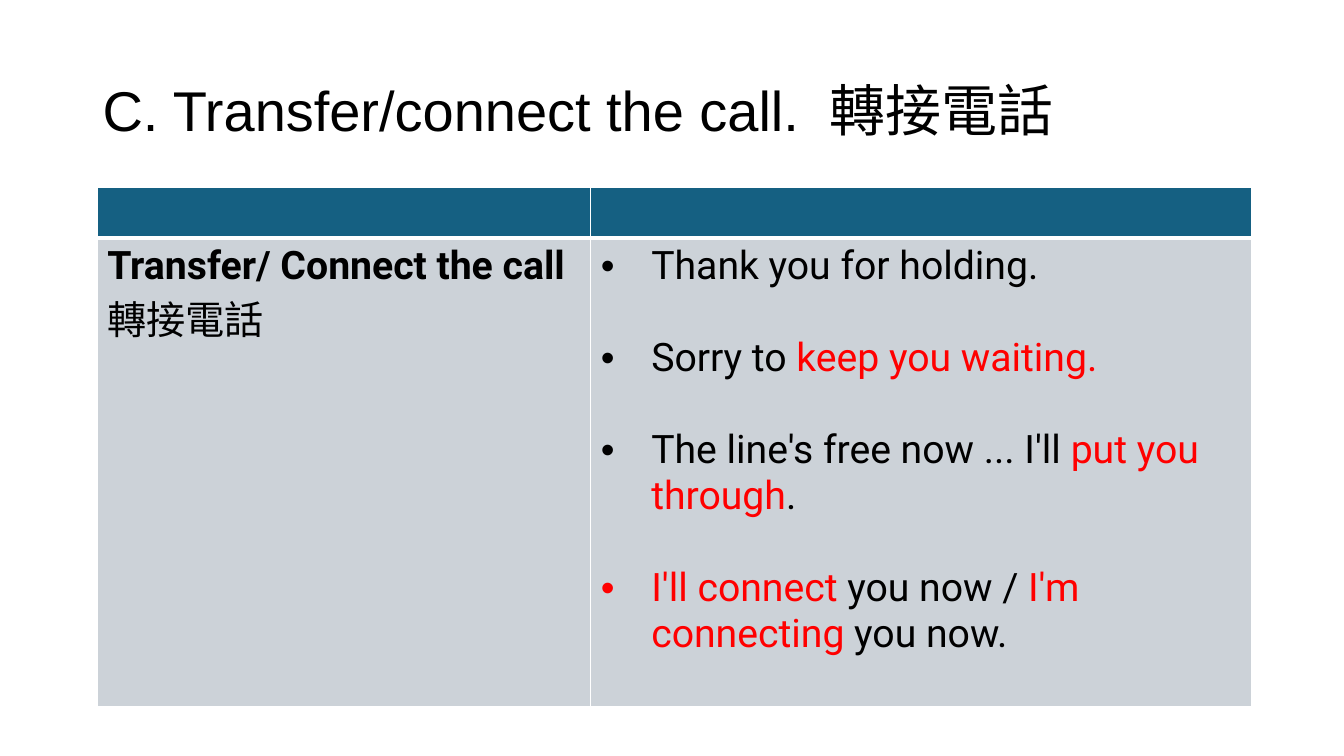
from lxml import etree
from pptx import Presentation
from pptx import util as u
from pptx.dml.color import RGBColor
from pptx.enum import text
from pptx.oxml import ns

BLACK = RGBColor(0x00, 0x00, 0x00)
RED = RGBColor(0xFF, 0x00, 0x00)
TEAL = RGBColor(0x15, 0x60, 0x82)
GREY = RGBColor(0xCC, 0xD2, 0xD8)
WHITE = RGBColor(0xFF, 0xFF, 0xFF)

PHRASES = [
    [("Thank you for holding.", BLACK)],
    [("Sorry to ", BLACK), ("keep you waiting.", RED)],
    [("The line's free now ... I'll ", BLACK), ("put you through", RED), (".", BLACK)],
    [("I'll connect ", RED), ("you now / ", BLACK), ("I'm connecting ", RED), ("you now.", BLACK)],
]


def add_span(para, words, font="Roboto", size=28, color=BLACK, bold=False, spacing=0):
    """Add one formatted run; spacing is extra character width in points."""
    span = para.add_run()
    span.text = words
    span.font.name = font
    span.font.size = u.Pt(size)
    span.font.color.rgb = color
    span.font.bold = bold
    if spacing:
        span.font._element.set("spc", str(spacing * 100))


class PhraseSlide:
    """Build a slide with a title and a two-column phrase table."""

    def __init__(self, deck):
        self.slide = deck.slides.add_slide(deck.slide_layouts[5])

    def title(self, english, chinese):
        """Fill the title placeholder with both languages."""
        box = self.slide.shapes.title
        box.left, box.top, box.width, box.height = map(u.Cm, (2.33, 1.01, 29.21, 3.68))
        frame = box.text_frame
        frame.auto_size = text.MSO_AUTO_SIZE.NONE
        frame.vertical_anchor = text.MSO_ANCHOR.MIDDLE
        para = frame.paragraphs[0]
        para.alignment = text.PP_ALIGN.LEFT
        para.line_spacing = 0.9
        for words, spacing in ((english, 0), (" ", 11), (chinese, 0)):
            add_span(para, words, font="Arial", size=40, spacing=spacing)

    def table(self, widths, heights):
        """Add the table with filled and ruled cells."""
        frame = self.slide.shapes.add_table(
            len(heights), len(widths), u.Cm(2.45), u.Cm(4.71),
            u.Cm(sum(widths)), u.Cm(sum(heights)))
        table = frame.table
        for column, width in zip(table.columns, widths):
            column.width = u.Cm(width)
        for index, (row, height) in enumerate(zip(table.rows, heights)):
            row.height = u.Cm(height)
            for cell in row.cells:
                cell.fill.solid()
                cell.fill.fore_color.rgb = GREY if index else TEAL
                self.borders(cell, top=3 if index else 1, bottom=1 if index else 3)
        return table

    def borders(self, cell, top, bottom):
        """Rule a cell in white with widths in points."""
        properties = cell._tc.get_or_add_tcPr()
        for place, (side, width) in enumerate(zip("LRTB", (1, 1, top, bottom))):
            line = etree.Element(ns.qn(f"a:ln{side}"), w=str(u.Pt(width)))
            fill = etree.SubElement(line, ns.qn("a:solidFill"))
            etree.SubElement(fill, ns.qn("a:srgbClr"), val=str(WHITE))
            properties.insert(place, line)

    def bullets(self, cell, items):
        """Write a bulleted list of coloured phrases."""
        frame = cell.text_frame
        for index, spans in enumerate(items):
            para = frame.add_paragraph() if index else frame.paragraphs[0]
            if index < len(items) - 1:
                para.space_after = u.Pt(33)
            properties = para._p.get_or_add_pPr()
            properties.set("marL", str(u.Cm(1.27)))
            properties.set("indent", str(u.Cm(-1.27)))
            etree.SubElement(properties, ns.qn("a:buFont"), typeface="Arial")
            etree.SubElement(properties, ns.qn("a:buChar"), char="•")
            for words, color in spans:
                add_span(para, words, color=color)


def main():
    """Create and save the deck."""
    deck = Presentation()
    deck.slide_width, deck.slide_height = u.Cm(33.87), u.Cm(19.05)
    page = PhraseSlide(deck)
    page.title("C. Transfer/connect the call.", "轉接電話")
    table = page.table(widths=(12.44, 16.64), heights=(1.29, 11.8))
    topic = table.cell(1, 0).text_frame
    add_span(topic.paragraphs[0], "Transfer/ Connect the call", bold=True)
    add_span(topic.add_paragraph(), "轉接電話", font="Arial")
    page.bullets(table.cell(1, 1), PHRASES)
    deck.save("out.pptx")


if __name__ == "__main__":
    main()
